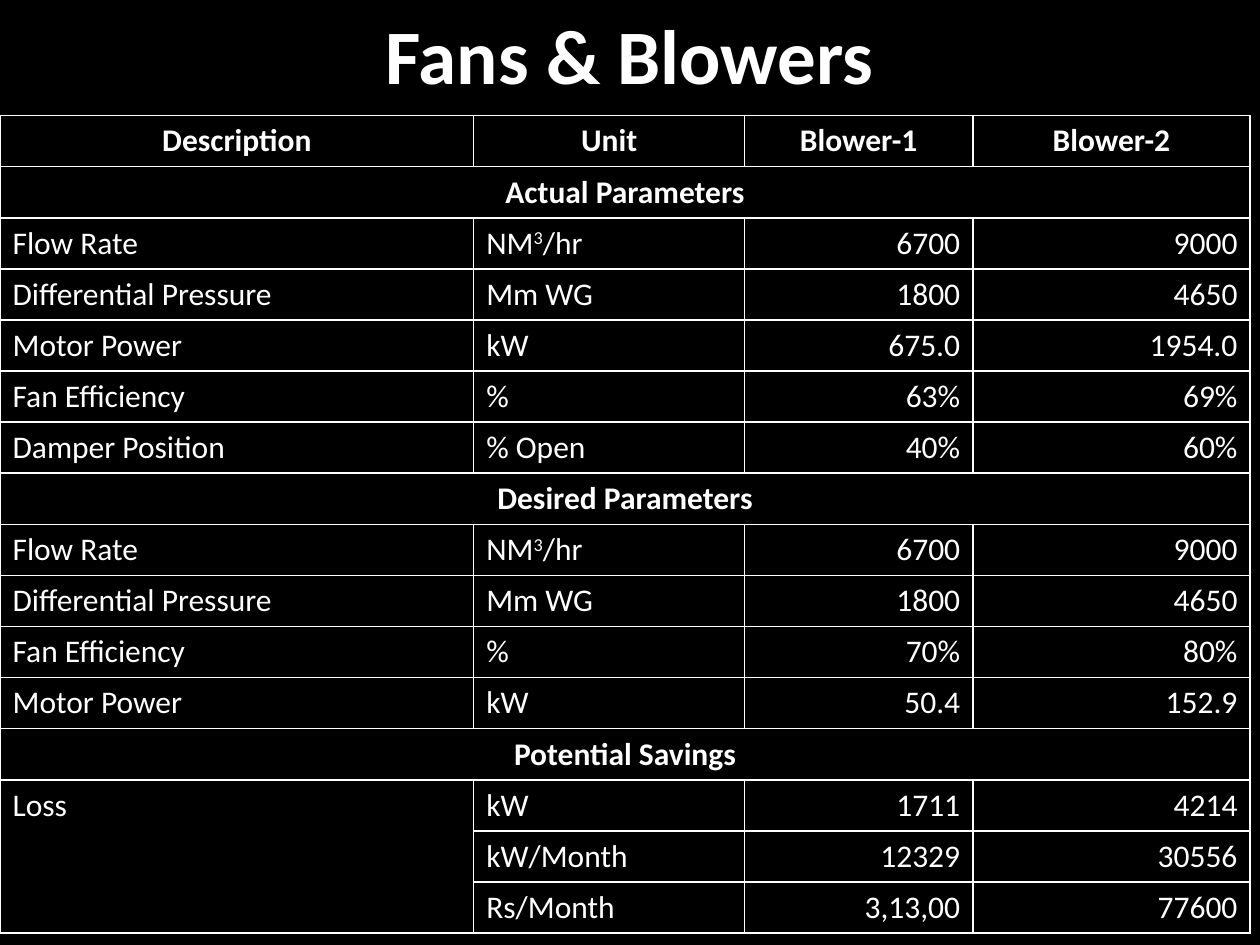
from lxml.etree import SubElement
from pptx import Presentation
from pptx.dml.color import RGBColor
from pptx.enum.text import MSO_ANCHOR, PP_ALIGN
from pptx.oxml.ns import qn
from pptx.util import Cm, Pt

COLORS = {"background": "000000", "text": "FFFFFF", "border": "FFFFFF"}
FONT = "Calibri"
COLUMN_WIDTHS = [9.55, 5.46, 4.6, 5.59]
ROW_HEIGHT = 1.02
HANGING = Cm(0.97)
ALIGNMENTS = [PP_ALIGN.LEFT, PP_ALIGN.LEFT, PP_ALIGN.RIGHT, PP_ALIGN.RIGHT]
FLOW_UNIT = [("NM", 0), ("3", 30000), ("/hr", 0)]

HEADER = ["Description", "Unit", "Blower-1", "Blower-2"]
ROWS = [
    ["Actual Parameters"],
    ["Flow Rate", FLOW_UNIT, "6700", "9000"],
    ["Differential Pressure", "Mm WG", "1800", "4650"],
    ["Motor Power", "kW", "675.0", "1954.0"],
    ["Fan Efficiency", "%", "63%", "69%"],
    ["Damper Position", "% Open", "40%", "60%"],
    ["Desired Parameters"],
    ["Flow Rate", FLOW_UNIT, "6700", "9000"],
    ["Differential Pressure", "Mm WG", "1800", "4650"],
    ["Fan Efficiency", "%", "70%", "80%"],
    ["Motor Power", "kW", "50.4", "152.9"],
    ["Potential Savings"],
    ["Loss", "kW", "1711", "4214"],
    [None, "kW/Month", "12329", "30556"],
    [None, "Rs/Month", "3,13,00", "77600"],
]


def add_run(p, text, size, bold, baseline=0):
    r = p.add_run()
    r.text = text
    r.font.name = FONT
    r.font.size = Pt(size)
    r.font.bold = bold
    r.font.color.rgb = RGBColor.from_string(COLORS["text"])
    if baseline:
        r.font._element.set("baseline", str(baseline))


def style_cell(cell):
    tc_pr = cell._tc.get_or_add_tcPr()
    for side in ("a:lnL", "a:lnR", "a:lnT", "a:lnB"):
        ln = SubElement(tc_pr, qn(side), w=str(Pt(1)))
        fill = SubElement(ln, qn("a:solidFill"))
        SubElement(fill, qn("a:srgbClr"), val=COLORS["border"])
    cell.fill.background()


def fill_cell(cell, content, align, bold=False):
    cell.vertical_anchor = MSO_ANCHOR.BOTTOM
    p = cell.text_frame.paragraphs[0]
    p.alignment = align
    p_pr = p._p.get_or_add_pPr()
    p_pr.set("marL", str(HANGING))
    p_pr.set("indent", str(-HANGING))
    parts = [(content, 0)] if isinstance(content, str) else content
    for text, baseline in parts:
        add_run(p, text, 18, bold, baseline)


def add_title(s, left, top, width, height):
    sp = s.shapes.title
    sp.left, sp.top, sp.width, sp.height = left, top, width, height
    tf = sp.text_frame
    tf.word_wrap = True
    tf.vertical_anchor = MSO_ANCHOR.MIDDLE
    p = tf.paragraphs[0]
    p.alignment = PP_ALIGN.CENTER
    add_run(p, "Fans & Blowers", 44, True)


def add_blower_table(s, left, top, width, height):
    rows = [HEADER] + ROWS
    table = s.shapes.add_table(len(rows), len(HEADER), left, top, width, height).table
    table.first_row = False
    table.horz_banding = False
    for column, column_width in zip(table.columns, COLUMN_WIDTHS):
        column.width = int(width * column_width / sum(COLUMN_WIDTHS))
    for cell in table.iter_cells():
        style_cell(cell)
    for i, row in enumerate(rows):
        table.rows[i].height = height // len(rows)
        is_section = len(row) == 1
        is_heading = is_section or row is HEADER
        if is_section:
            table.cell(i, 0).merge(table.cell(i, len(HEADER) - 1))
        for j, content in enumerate(row):
            if content is not None:
                align = PP_ALIGN.CENTER if is_heading else ALIGNMENTS[j]
                fill_cell(table.cell(i, j), content, align, is_heading)
    loss = table.cell(len(rows) - 3, 0)
    loss.merge(table.cell(len(rows) - 1, 0))
    loss.vertical_anchor = MSO_ANCHOR.TOP


def main():
    prs = Presentation()
    prs.slide_width, prs.slide_height = Cm(25.4), Cm(19.05)
    s = prs.slides.add_slide(prs.slide_layouts[5])
    s.background.fill.solid()
    s.background.fill.fore_color.rgb = RGBColor.from_string(COLORS["background"])
    add_title(s, 0, 0, prs.slide_width, Cm(2.16))
    add_blower_table(s, 0, Cm(2.33), Cm(sum(COLUMN_WIDTHS)),
                     Cm(ROW_HEIGHT * (len(ROWS) + 1)))
    prs.save("out.pptx")


if __name__ == "__main__":
    main()
